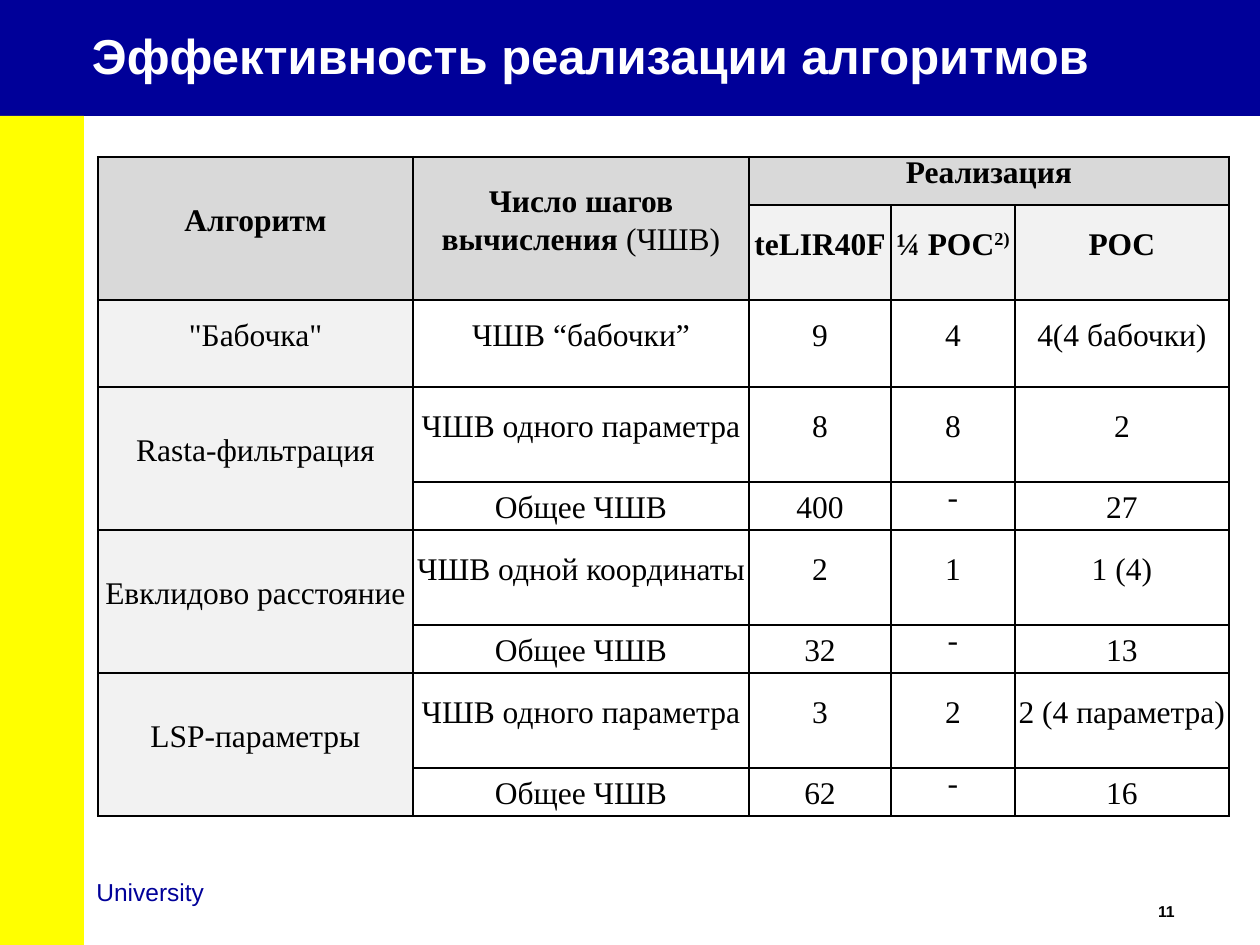
import pptx
import pptx.dml.color
import pptx.enum.shapes
import pptx.enum.text
import pptx.oxml
import pptx.oxml.ns
import pptx.util

PX = 914400 / 126
NAVY, YELLOW, WHITE, BLACK = "000099", "FFFF00", "FFFFFF", "000000"
HEAD_GREY, LIGHT_GREY = "D9D9D9", "F2F2F2"
SANS, SERIF = "Arial", "Times New Roman"
HALF_LINE = pptx.util.Pt(11)

HEADING = "Эффективность реализации алгоритмов"
BANDS = [((0, 0, 1260, 116), NAVY), ((0, 116, 84, 829), YELLOW)]

COLUMNS = [315, 336, 142, 124, 214]
ROWS = [48, 95, 87, 95, 48, 95, 48, 95, 48]
TABLE_LEFT, TABLE_TOP = 98, 157
STEPS = [[("Число шагов", {})],
         [("вычисления ", {}), ("(ЧШВ)", {"bold": False})]]
QUARTER = [[("¼ РОС", {}), ("2)", {"baseline": 30000})]]
TOTAL = "Общее ЧШВ"
CELLS = [
    ["Алгоритм", STEPS, "Реализация", None, None],
    [None, None, "teLIR40F", QUARTER, "РОС"],
    ["\"Бабочка\"", "ЧШВ “бабочки”", "9", "4", "4(4 бабочки)"],
    ["Rasta-фильтрация", "ЧШВ одного параметра", "8", "8", "2"],
    [None, TOTAL, "400", "-", "27"],
    ["Евклидово расстояние", "ЧШВ одной координаты", "2", "1", "1 (4)"],
    [None, TOTAL, "32", "-", "13"],
    ["LSP-параметры", "ЧШВ одного параметра", "3", "2", "2 (4 параметра)"],
    [None, TOTAL, "62", "-", "16"],
]
SPANS = {(0, 0): (2, 1), (0, 1): (2, 1), (0, 2): (1, 3),
         (3, 0): (2, 1), (5, 0): (2, 1), (7, 0): (2, 1)}


def px(length):
    return pptx.util.Emu(round(length * PX))


def rgb(value):
    return pptx.dml.color.RGBColor.from_string(value)


def add_run(paragraph, text, size, face, color, bold=False, baseline=None):
    run = paragraph.add_run()
    run.text = text
    run.font.size = pptx.util.Pt(size)
    run.font.name = face
    run.font.bold = bold
    run.font.color.rgb = rgb(color)
    if baseline:
        run.font._element.set("baseline", str(baseline))


def tighten(frame):
    frame.margin_left = frame.margin_right = px(8)
    frame.margin_top = frame.margin_bottom = px(3)


def add_label(slide, box, text, size, color, bold=False, wrap=True):
    frame = slide.shapes.add_textbox(*map(px, box)).text_frame
    frame.word_wrap = wrap
    add_run(frame.paragraphs[0], text, size, SANS, color, bold)
    return frame


def add_bands(slide):
    for box, color in BANDS:
        band = slide.shapes.add_shape(
            pptx.enum.shapes.MSO_SHAPE.RECTANGLE, *map(px, box))
        band.shadow.inherit = False
        band.fill.solid()
        band.fill.fore_color.rgb = rgb(color)
        band.line.fill.background()


def set_heading(slide):
    heading = slide.shapes.title
    heading.element.getparent().append(heading.element)
    heading.left, heading.top, heading.width, heading.height = map(
        px, (84, 31, 1103, 57))
    heading.fill.solid()
    heading.fill.fore_color.rgb = rgb(NAVY)
    frame = heading.text_frame
    tighten(frame)
    frame.word_wrap = True
    frame.auto_size = pptx.enum.text.MSO_AUTO_SIZE.SHAPE_TO_FIT_TEXT
    frame.vertical_anchor = pptx.enum.text.MSO_ANCHOR.MIDDLE
    paragraph = frame.paragraphs[0]
    paragraph.alignment = pptx.enum.text.PP_ALIGN.LEFT
    paragraph.line_spacing = 0.87
    add_run(paragraph, HEADING, 28, SANS, WHITE, True)


def set_borders(cell, row, col):
    outer = {"L": col == 0, "R": col + cell.span_width == len(COLUMNS),
             "T": row == 0, "B": row + cell.span_height == len(ROWS)}
    properties = cell._tc.get_or_add_tcPr()
    for index, (side, is_outer) in enumerate(outer.items()):
        width = pptx.util.Pt(1.5 if is_outer else 1)
        properties.insert(index, pptx.oxml.parse_xml(
            f'<a:ln{side} {pptx.oxml.ns.nsdecls("a")} w="{width}"><a:solidFill>'
            f'<a:srgbClr val="{BLACK}"/></a:solidFill></a:ln{side}>'))


def fill_cell(cell, row, col):
    content = CELLS[row][col]
    cell.margin_left = cell.margin_right = 0
    cell.margin_top = HALF_LINE if (
        row in (4, 6, 8) and content not in (None, "-")) else 0
    cell.margin_bottom = 0
    cell.vertical_anchor = pptx.enum.text.MSO_ANCHOR.MIDDLE
    if row == 0 or (row == 1 and col < 2):
        shade = HEAD_GREY
    else:
        shade = LIGHT_GREY if row == 1 or col == 0 else None
    if shade:
        cell.fill.solid()
        cell.fill.fore_color.rgb = rgb(shade)
    else:
        cell.fill.background()
    set_borders(cell, row, col)
    if content is None:
        return
    lines = [[(content, {})]] if isinstance(content, str) else content
    for number, line in enumerate(lines):
        frame = cell.text_frame
        paragraph = frame.add_paragraph() if number else frame.paragraphs[0]
        paragraph.alignment = pptx.enum.text.PP_ALIGN.CENTER
        paragraph.line_spacing = HALF_LINE
        if number:
            paragraph.space_before = HALF_LINE
        for text, style in line:
            add_run(paragraph, text, 18, SERIF, BLACK,
                    **{"bold": row < 2, **style})


def add_comparison(slide):
    table = slide.shapes.add_table(
        len(ROWS), len(COLUMNS), px(TABLE_LEFT), px(TABLE_TOP),
        px(sum(COLUMNS)), px(sum(ROWS))).table
    table.first_row = table.horz_banding = False
    for column, width in zip(table.columns, COLUMNS):
        column.width = px(width)
    for row, height in zip(table.rows, ROWS):
        row.height = px(height)
    for (row, col), (down, across) in SPANS.items():
        table.cell(row, col).merge(
            table.cell(row + down - 1, col + across - 1))
    for row in range(len(ROWS)):
        for col in range(len(COLUMNS)):
            fill_cell(table.cell(row, col), row, col)


def main():
    deck = pptx.Presentation()
    deck.slide_width, deck.slide_height = px(1260), px(945)
    slide = deck.slides.add_slide(deck.slide_layouts.get_by_name("Title Only"))
    add_bands(slide)
    number = add_label(slide, (1150, 900, 33, 24), "11", 9, BLACK, True, False)
    tighten(number)
    number.paragraphs[0].line_spacing = 0.97
    add_label(slide, (84, 871, 451, 42), "University", 14, NAVY)
    set_heading(slide)
    add_comparison(slide)
    deck.save("out.pptx")


if __name__ == "__main__":
    main()
